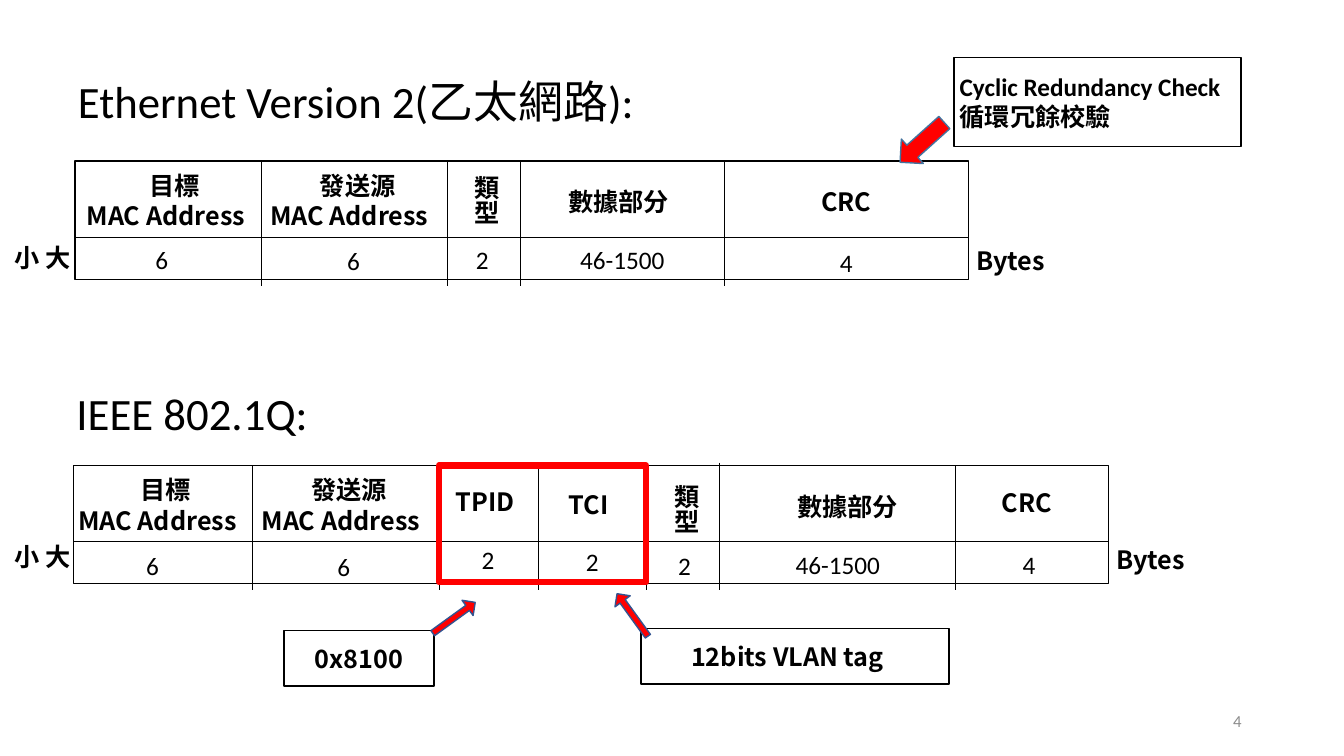
from pptx import Presentation
from pptx.dml.color import RGBColor
from pptx.enum.shapes import MSO_CONNECTOR, MSO_SHAPE
from pptx.enum.text import MSO_ANCHOR, MSO_AUTO_SIZE, PP_ALIGN
from pptx.oxml.ns import qn
from pptx.util import Pt
from lxml import etree

LEFT, MID, RIGHT = PP_ALIGN.LEFT, PP_ALIGN.CENTER, PP_ALIGN.RIGHT
TOP, CENTER = MSO_ANCHOR.TOP, MSO_ANCHOR.MIDDLE
RECT, DOWN = MSO_SHAPE.RECTANGLE, MSO_SHAPE.DOWN_ARROW
LINE = MSO_CONNECTOR.STRAIGHT
NONE = MSO_AUTO_SIZE.NONE

INK = {"black": "000000", "white": "FFFFFF", "red": "FF0000",
       "gray": "8C8C8C", "navy": "325491", "steel": "43739E"}
SANS, CJK = "Calibri", "Noto Sans CJK SC"

HEAD, ROW = 57, 30          # heights of the name row and the size row
SPLIT = ((0, HEAD), (53, 89))
TALL = ((-2, 89),)
TYPE = "類型"

# Each field: left edge, dividers, name, name centre, name top,
# size, size centre, size top (all relative to the frame)
ETHER = [
    (0, (), ("目標", "MAC Address"), 65, 3, "6", 62, 56),
    (133.5, SPLIT, ("發送源", "MAC Address"), 196, 3, "6", 199, 57),
    (266, SPLIT, (TYPE,), 290, 3, "2", 291, 56),
    (318.5, SPLIT, ("數據部分",), 388.5, 14.5, "46-1500", 391, 56),
    (464, SPLIT, ("CRC",), 551, 14.5, "4", 551, 58),
]
TAGGED = [
    (0, (), ("目標", "MAC Address"), 60, 3, "6", 56.5, 57),
    (128, SPLIT, ("發送源", "MAC Address"), 191, 3, "6", 193, 57.5),
    (261, SPLIT, ("TPID",), 294, 11.5, "2", 296, 52.5),
    (332, TALL, ("TCI",), 368, 13.5, "2", 370.5, 54.5),
    (409, TALL, (TYPE,), 434, 6, "2", 436.5, 57),
    (461, TALL, ("數據部分",), 553, 15, "46-1500", 546, 56),
    (630, SPLIT, ("CRC",), 681, 12, "4", 682.5, 56),
]


def color(name):
    return RGBColor.from_string(INK[name])


def write(shape, lines, size=18, font=CJK, bold=True, tint="black",
          align=LEFT, anchor=TOP):
    frame = shape.text_frame
    frame.word_wrap = True
    frame.auto_size = NONE
    frame.vertical_anchor = anchor
    for i, line in enumerate(lines):
        para = frame.add_paragraph() if i else frame.paragraphs[0]
        para.alignment = align
        run = para.add_run()
        run.text = line
        run.font.name = font
        run.font.size = Pt(size)
        run.font.bold = bold
        run.font.color.rgb = color(tint)
        east = etree.SubElement(run.font._element, qn("a:ea"))
        east.set("typeface", CJK)
    return frame


def text(slide, box, lines, **style):
    shape = slide.shapes.add_textbox(*map(Pt, box))
    return write(shape, lines, **style)


def tall(slide, box, word):
    """Add a word in upright vertical writing."""
    frame = text(slide, box, (word,))
    frame._txBody.bodyPr.set("vert", "eaVert")


def block(slide, box, fill=None, edge="black", width=1, kind=RECT):
    shape = slide.shapes.add_shape(kind, *map(Pt, box))
    shape.shadow.inherit = False
    if fill:
        shape.fill.solid()
        shape.fill.fore_color.rgb = color(fill)
    else:
        shape.fill.background()
    shape.line.color.rgb = color(edge)
    shape.line.width = Pt(width)
    return shape


def divide(slide, x, top, end):
    line = slide.shapes.add_connector(LINE, Pt(x), Pt(top), Pt(x), Pt(end))
    line.line.color.rgb = color("black")
    line.line.width = Pt(0.5)
    etree.SubElement(line._element.spPr, qn("a:effectLst"))


def arrow(slide, box, turn, edge, neck=0.5):
    shape = block(slide, box, "red", edge, kind=DOWN)
    shape.adjustments[0] = neck
    shape.rotation = turn


def note(slide, box, lines, font=CJK, align=MID, left=7, right=7):
    shape = block(slide, box)
    frame = write(shape, lines, font=font, align=align, anchor=CENTER)
    frame.margin_left, frame.margin_right = Pt(left), Pt(right)


def packet(slide, x, y, wide, fields, side, unit):
    """Draw one frame layout; side and unit are the tops of its end labels."""
    block(slide, (x, y, wide, HEAD), "white")
    block(slide, (x, y + 54.5, wide, ROW), "white")
    for left, cuts, name, mid, top, size, at, low in fields:
        for start, end in cuts:
            divide(slide, x + left, y + start, y + end)
        if name == (TYPE,):
            tall(slide, (x + mid - 18, y + top, 36, 51), TYPE)
        else:
            frame = text(slide, (x + mid - 79, y + top, 158, 29 * len(name)),
                         name, align=MID)
            if len(name) > 1:
                frame.paragraphs[0]._p.get_or_add_pPr().set("marL", str(Pt(12)))
        text(slide, (x + at - 45, y + low, 90, 29), (size,),
             font=SANS, bold=False, align=MID)
    tall(slide, (19, y + side, 36, 46), "大小")
    text(slide, (x + wide - 1.5, y + unit, 66, 29), ("Bytes",))


def ether(slide, x, y):
    title = slide.shapes.title
    title.left, title.top, title.width, title.height = map(
        Pt, (x - 5, y - 66, 430, 46))
    write(title, ("Ethernet Version 2(乙太網路):",), 32, SANS, False)
    packet(slide, x, y, 638.5, ETHER, 53, 57)
    arrow(slide, (x + 593.5, y - 34.5, 23.5, 42.5), 48.1, "steel")
    note(slide, (x + 628, y - 74, 205, 63.5),
         ("Cyclic Redundancy Check", "循環冗餘校驗"), SANS, LEFT, 4, 2)


def tagged(slide, x, y):
    text(slide, (x - 5, y - 60.5, 430, 46), ("IEEE 802.1Q:",),
         size=32, font=SANS, bold=False)
    packet(slide, x, y, 739.5, TAGGED, 49, 52.5)
    block(slide, (x + 261, y, 148, 83.5), edge="red", width=4.5)
    note(slide, (x + 150.5, y + 118, 107, 39.5), ("0x8100",))
    note(slide, (x + 405.5, y + 116.5, 220, 39.5), ("12bits VLAN tag",),
         right=18)
    for left, top, turn in ((392.5, 88, 144.1), (265, 90, 234.1)):
        arrow(slide, (x + left, y + top, 13.5, 37.5), turn, "navy", 0.33)


def main():
    deck = Presentation()
    deck.slide_width, deck.slide_height = Pt(960), Pt(540)
    slide = deck.slides.add_slide(deck.slide_layouts[5])
    ether(slide, 53.5, 115)
    tagged(slide, 52.5, 332.5)
    text(slide, (678, 500.5, 216, 29), ("4",), size=12, font=SANS,
         bold=False, tint="gray", align=RIGHT, anchor=CENTER)
    deck.save("out.pptx")


if __name__ == "__main__":
    main()
